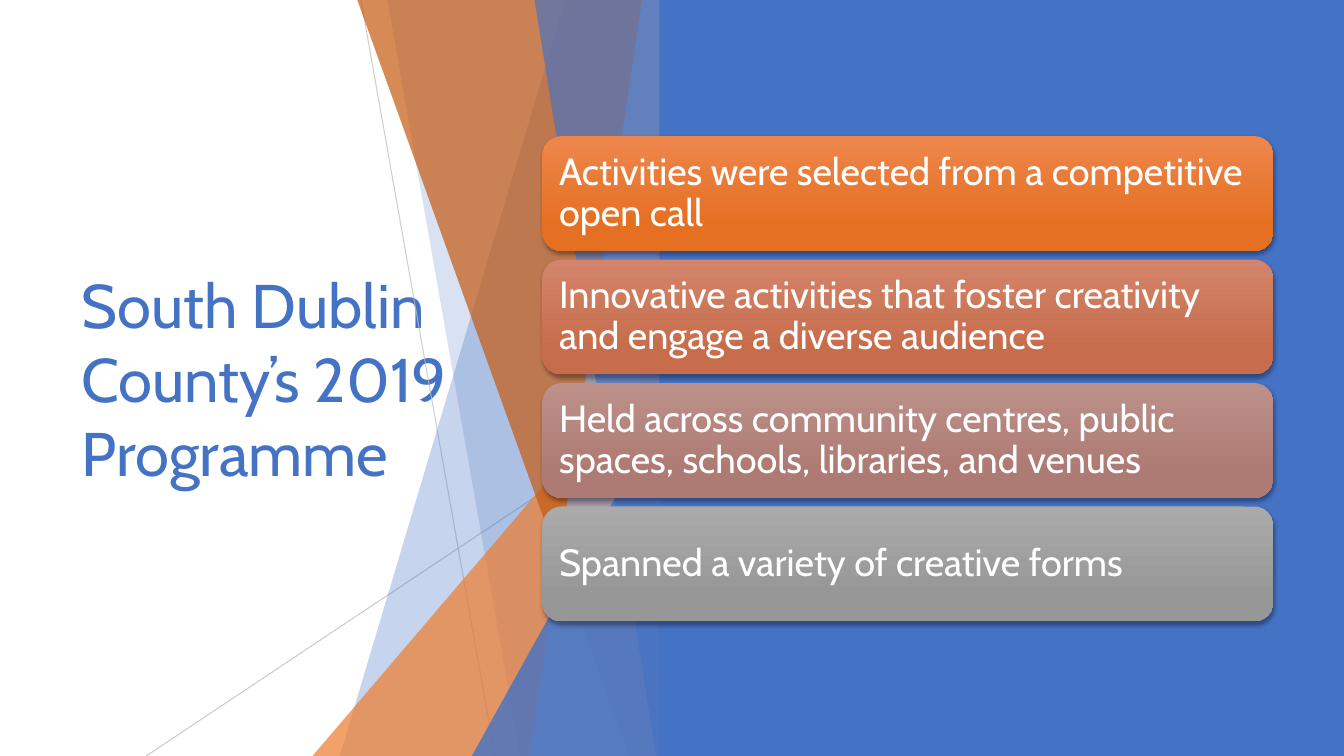
from dataclasses import dataclass

from lxml import etree
from pptx import Presentation
from pptx.dml.color import RGBColor
from pptx.enum.shapes import MSO_CONNECTOR as CONN, MSO_SHAPE as SHAPE
from pptx.enum.text import MSO_ANCHOR as ANCHOR, MSO_AUTO_SIZE as AUTO, PP_ALIGN as ALIGN
from pptx.oxml.ns import qn
from pptx.util import Inches, Pt

BLUE = RGBColor(0x44, 0x72, 0xC4)
LIGHT_BLUE = RGBColor(0x8F, 0xAA, 0xDC)
ORANGE = RGBColor(0xED, 0x7D, 0x31)
RUST = RGBColor(0xC5, 0x5A, 0x11)
GREY = RGBColor(0xBF, 0xBF, 0xBF)
WHITE = RGBColor(0xFF, 0xFF, 0xFF)

BANDS_RIGHT = 6.66
BANDS_TOP = -0.01
BOTTOM = 7.5

CARD_TOP = 1.35
CARD_STEP = 1.225
CARDS = [
    ("Activities were selected from a competitive open call",
     RGBColor(0xEE, 0x86, 0x4C), RGBColor(0xE5, 0x70, 0x21)),
    ("Innovative activities that foster creativity and engage a diverse audience",
     RGBColor(0xD3, 0x84, 0x6A), RGBColor(0xC7, 0x6D, 0x4C)),
    ("Held across community centres, public spaces, schools, libraries, and venues",
     RGBColor(0xBC, 0x91, 0x8A), RGBColor(0xAD, 0x7B, 0x73)),
    ("Spanned a variety of creative forms",
     RGBColor(0xAA, 0xAA, 0xAA), RGBColor(0x97, 0x97, 0x97)),
]


def set_alpha(parent, percent):
    color = next(parent.iter(qn("a:srgbClr")))
    etree.SubElement(color, qn("a:alpha"), val=str(percent * 1000))


@dataclass
class Deck:
    slide: object
    font: str = "Cabin"

    def title(self, text, left, top, width, height):
        sp = self.slide.shapes.title
        sp.left, sp.top, sp.width, sp.height = map(Inches, (left, top, width, height))
        tf = sp.text_frame
        tf.text = text
        tf.word_wrap = True
        tf.auto_size = AUTO.NONE
        tf.vertical_anchor = ANCHOR.MIDDLE
        self.style(tf.paragraphs[0], 44, BLUE)

    def style(self, p, size, color):
        p.alignment = ALIGN.LEFT
        p.font.name = self.font
        p.font.size = Pt(size)
        p.font.color.rgb = color

    def paint(self, sp, color, alpha=100):
        sp.shadow.inherit = False
        sp.fill.solid()
        sp.fill.fore_color.rgb = color
        sp.line.fill.background()
        if alpha < 100:
            set_alpha(sp.fill._xPr, alpha)

    def line(self, x1, y1, x2, y2, alpha):
        cxn = self.slide.shapes.add_connector(CONN.STRAIGHT, *map(Inches, (x1, y1, x2, y2)))
        cxn.line.color.rgb = GREY
        cxn.line.width = Pt(0.75)
        set_alpha(cxn.line._ln, alpha)
        etree.SubElement(cxn._element.spPr, qn("a:effectLst"))

    def band(self, top_x, bottom_x, color, alpha):
        points = [(top_x, BANDS_TOP), (BANDS_RIGHT, BANDS_TOP),
                  (BANDS_RIGHT, BOTTOM), (bottom_x, BOTTOM)]
        start, *rest = [(Inches(x), Inches(y)) for x, y in points]
        builder = self.slide.shapes.build_freeform(*start)
        builder.add_line_segments(rest, close=True)
        self.paint(builder.convert_to_shape(), color, alpha)

    def triangle(self, left, top, color, alpha):
        sp = self.slide.shapes.add_shape(
            SHAPE.ISOSCELES_TRIANGLE,
            *map(Inches, (left, top, BANDS_RIGHT - left, BOTTOM - top)))
        sp.adjustments[0] = 1
        self.paint(sp, color, alpha)

    def panel(self, left, top, width, height, color):
        sp = self.slide.shapes.add_shape(
            SHAPE.RECTANGLE, *map(Inches, (left, top, width, height)))
        self.paint(sp, color)

    def card(self, text, top, light, dark):
        sp = self.slide.shapes.add_shape(
            SHAPE.ROUNDED_RECTANGLE, *map(Inches, (5.38, top, 7.25, 1.14)))
        sp.line.fill.background()
        sp.fill.gradient()
        sp.fill.gradient_angle = 270
        for stop, color, position in zip(sp.fill.gradient_stops, (light, dark), (0, 0.78)):
            stop.color.rgb = color
            stop.position = position
        self.drop_shadow(sp)
        tf = sp.text_frame
        tf.text = text
        tf.word_wrap = True
        tf.vertical_anchor = ANCHOR.MIDDLE
        tf.margin_left = tf.margin_right = tf.margin_top = tf.margin_bottom = Inches(0.11)
        p = tf.paragraphs[0]
        p.line_spacing = 0.9
        self.style(p, 27, WHITE)

    def drop_shadow(self, sp):
        sp.shadow.inherit = False
        effects = sp._element.spPr.find(qn("a:effectLst"))
        shadow = etree.SubElement(
            effects, qn("a:outerShdw"), blurRad=str(Pt(3)), dist=str(Pt(2)),
            dir="5400000", algn="ctr", rotWithShape="0")
        etree.SubElement(shadow, qn("a:srgbClr"), val="000000")
        set_alpha(shadow, 35)


def main():
    prs = Presentation()
    prs.slide_width, prs.slide_height = Inches(13.33), Inches(7.5)
    deck = Deck(prs.slides.add_slide(prs.slide_layouts[5]))

    deck.title("South Dublin County’s 2019 Programme", 0.71, 1.51, 3.88, 4.48)
    deck.line(3.58, 0, 4.91, BOTTOM, 75)
    deck.line(BANDS_RIGHT, 4.03, 1.45, BOTTOM, 80)
    deck.band(5.61, 3.37, BLUE, 30)
    deck.band(3.84, 5.16, BLUE, 20)
    deck.triangle(3.1, 3.33, ORANGE, 72)
    deck.band(3.54, 6.24, RUST, 70)
    deck.band(6.37, 5.25, LIGHT_BLUE, 70)
    deck.band(5.3, 6.51, BLUE, 65)
    deck.triangle(4.68, 3.93, BLUE, 80)
    deck.panel(6.54, 0, 6.8, BOTTOM, BLUE)

    for i, (text, light, dark) in enumerate(CARDS):
        deck.card(text, CARD_TOP + i * CARD_STEP, light, dark)

    prs.save("out.pptx")


if __name__ == "__main__":
    main()
